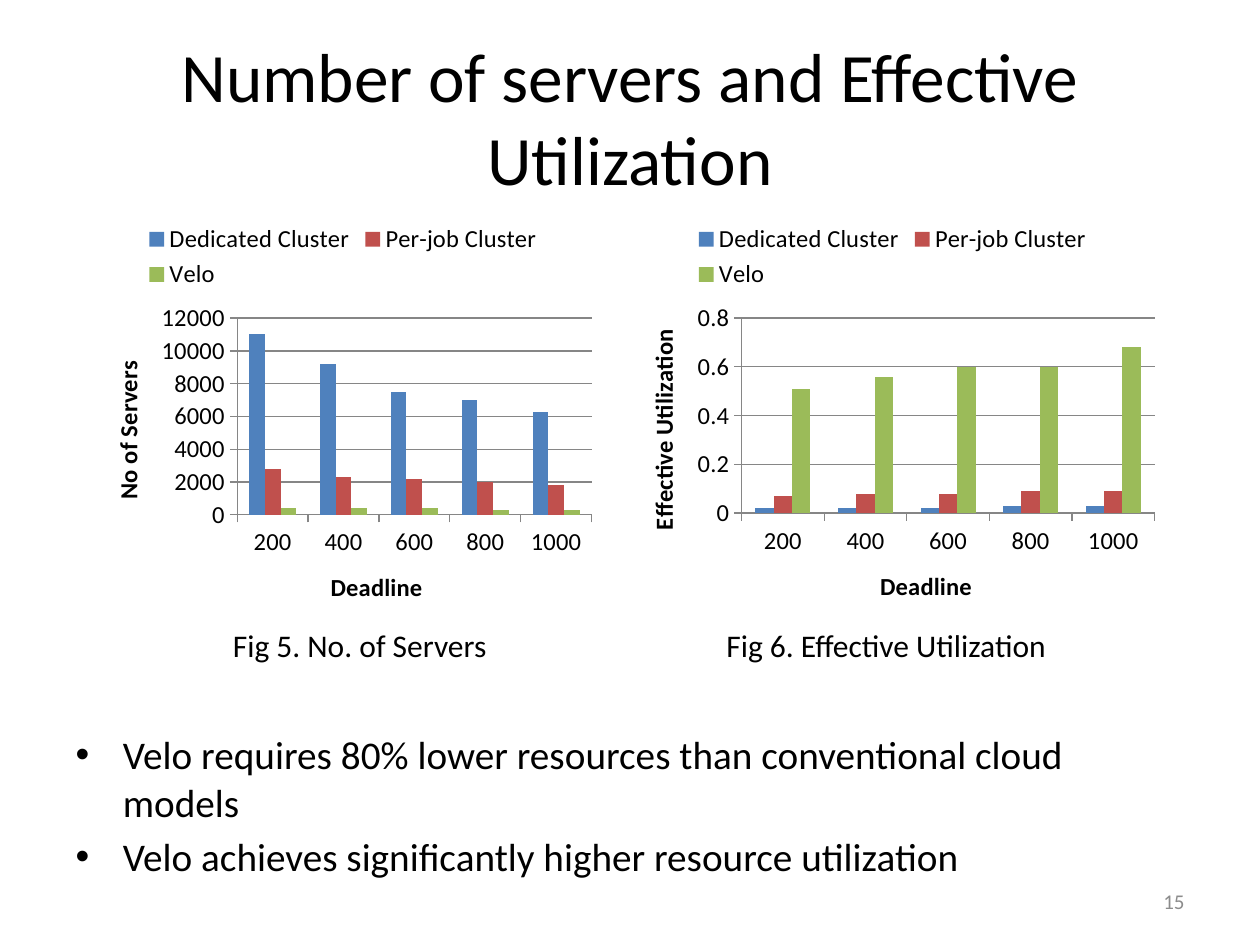
from pptx import Presentation
from pptx.chart.data import CategoryChartData as ChartData
from pptx.dml.color import RGBColor
from pptx.enum.chart import XL_CHART_TYPE as ChartType
from pptx.enum.chart import XL_LEGEND_POSITION as LegendPosition
from pptx.enum.chart import XL_TICK_MARK as TickMark
from pptx.enum.text import MSO_ANCHOR as Anchor
from pptx.enum.text import MSO_AUTO_SIZE as AutoSize
from pptx.enum.text import PP_ALIGN as Align
from pptx.util import Pt

BLACK = RGBColor(0x00, 0x00, 0x00)
GRAY = RGBColor(0x8C, 0x8C, 0x8C)
AXIS_GRAY = RGBColor(0x86, 0x86, 0x86)
BLUE = RGBColor(0x4F, 0x81, 0xBD)
RED = RGBColor(0xC0, 0x50, 0x4D)
GREEN = RGBColor(0x9B, 0xBB, 0x59)

FONT = "Calibri"
DEADLINES = ["200", "400", "600", "800", "1000"]
CLUSTERS = {"Dedicated Cluster": BLUE, "Per-job Cluster": RED, "Velo": GREEN}
SERVERS = [
    [11000, 9200, 7500, 7000, 6300],
    [2800, 2300, 2200, 2000, 1800],
    [400, 400, 400, 300, 300],
]
UTILIZATION = [
    [0.02, 0.02, 0.02, 0.03, 0.03],
    [0.07, 0.08, 0.08, 0.09, 0.09],
    [0.51, 0.56, 0.6, 0.6, 0.68],
]
FINDINGS = [
    "Velo requires 80% lower resources than conventional cloud models",
    "Velo achieves significantly higher resource utilization",
]


def points(box):
    return [Pt(value) for value in box]


def format_font(font, size, color=BLACK, bold=False):
    values = {"name": FONT, "size": Pt(size), "bold": bold}
    for name, value in values.items():
        setattr(font, name, value)
    font.color.rgb = color


def write_paragraphs(shape, lines, size, color=BLACK, align=None):
    frame = shape.text_frame
    frame.word_wrap = True
    frame.text = "\n".join(lines)
    for paragraph in frame.paragraphs:
        paragraph.alignment = align
        format_font(paragraph.runs[0].font, size, color)


def fill_placeholder(shape, box, lines, size, align=None):
    names = ("left", "top", "width", "height")
    for name, value in zip(names, points(box)):
        setattr(shape, name, value)
    write_paragraphs(shape, lines, size, align=align)
    shape.text_frame.auto_size = AutoSize.NONE


def add_text(slide, box, text, size, color=BLACK, align=Align.LEFT,
             anchor=Anchor.TOP):
    shape = slide.shapes.add_textbox(*points(box))
    write_paragraphs(shape, [text], size, color, align)
    shape.text_frame.vertical_anchor = anchor


def format_axis(axis, title):
    axis.major_tick_mark = TickMark.OUTSIDE
    axis.minor_tick_mark = TickMark.NONE
    axis.format.line.color.rgb = AXIS_GRAY
    format_font(axis.tick_labels.font, 14)
    frame = axis.axis_title.text_frame
    frame.text = title
    format_font(frame.paragraphs[0].runs[0].font, 14, bold=True)


def add_column_chart(slide, box, value_title, rows, maximum, step):
    data = ChartData()
    data.categories = DEADLINES
    for name, values in zip(CLUSTERS, rows):
        data.add_series(name, values)
    chart = slide.shapes.add_chart(
        ChartType.COLUMN_CLUSTERED, *points(box), data).chart
    format_font(chart.font, 14)
    chart.has_title = False
    chart.has_legend = True
    chart.legend.position = LegendPosition.TOP
    chart.legend.include_in_layout = False
    format_font(chart.legend.font, 14)

    plot = chart.plots[0]
    plot.gap_width = 150
    plot.vary_by_categories = False
    for series, color in zip(plot.series, CLUSTERS.values()):
        series.format.fill.solid()
        series.format.fill.fore_color.rgb = color
        series.invert_if_negative = False

    format_axis(chart.category_axis, "Deadline")
    value_axis = chart.value_axis
    format_axis(value_axis, value_title)
    scale = {"minimum_scale": 0, "maximum_scale": maximum, "major_unit": step}
    for name, value in scale.items():
        setattr(value_axis, name, value)
    value_axis.has_major_gridlines = True
    value_axis.major_gridlines.format.line.color.rgb = AXIS_GRAY


def main():
    presentation = Presentation()
    presentation.slide_width = Pt(720)
    presentation.slide_height = Pt(540)
    slide = presentation.slides.add_slide(presentation.slide_layouts[1])

    title, body = slide.placeholders
    fill_placeholder(title, (36, 21.6, 648, 90),
                     ["Number of servers and Effective Utilization"],
                     39.6, Align.CENTER)
    fill_placeholder(body, (36, 414, 648, 80.6), FINDINGS, 22.4)

    add_column_chart(slide, (48, 120, 296, 241), "No of Servers",
                     SERVERS, 12000, 2000)
    add_column_chart(slide, (354, 120, 312, 240), "Effective Utilization",
                     UTILIZATION, 0.8, 0.2)
    add_text(slide, (126, 354, 204, 29), "Fig 5. No. of Servers", 18)
    add_text(slide, (408, 354, 204, 29), "Fig 6. Effective Utilization", 18)
    add_text(slide, (516, 500.5, 168, 28.8), "15", 12, GRAY,
             Align.RIGHT, Anchor.MIDDLE)

    presentation.save("out.pptx")


if __name__ == "__main__":
    main()
